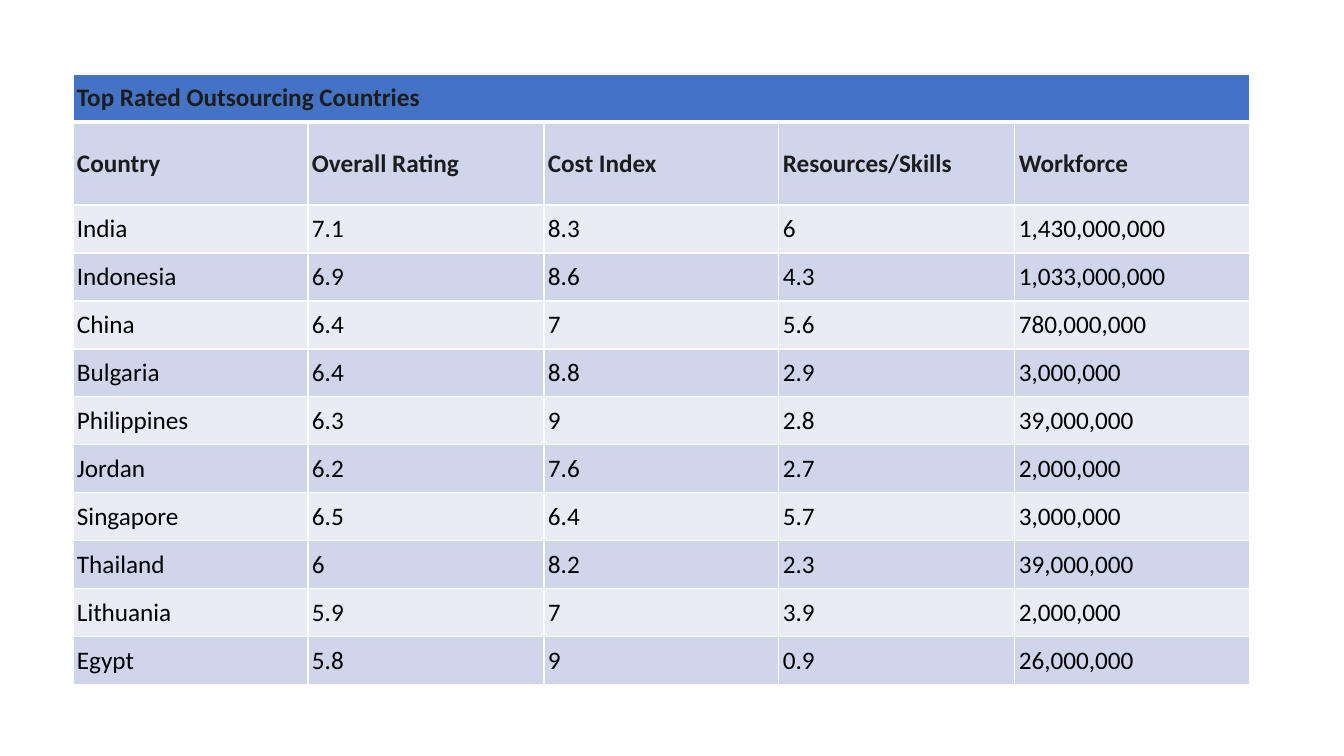
from dataclasses import dataclass
from itertools import pairwise

from lxml import etree
from pptx import Presentation
from pptx import util as u
from pptx.dml.color import RGBColor
from pptx.enum import text
from pptx.oxml import ns

EMU_PER_PX = 914400 / 100.8
SLIDE_WIDTH, SLIDE_HEIGHT = 1344, 756
TABLE_LEFT, TABLE_TOP, TABLE_WIDTH = 73, 74, 1177
ROW_HEIGHT, HEADING_HEIGHT = 48, 83
FONT_NAME, FONT_SIZE = "Calibri", 18
WHITE, BLUE, DARK, BLACK = "FFFFFF", "4472C4", "1C1C1C", "000000"
BANDS = ("CFD5EA", "E9EBF5")

TITLE = "Top Rated Outsourcing Countries"
HEADINGS = ("Country", "Overall Rating", "Cost Index", "Resources/Skills", "Workforce")
COUNTRIES = (
    ("India", "7.1", "8.3", "6", "1,430,000,000"),
    ("Indonesia", "6.9", "8.6", "4.3", "1,033,000,000"),
    ("China", "6.4", "7", "5.6", "780,000,000"),
    ("Bulgaria", "6.4", "8.8", "2.9", "3,000,000"),
    ("Philippines", "6.3", "9", "2.8", "39,000,000"),
    ("Jordan", "6.2", "7.6", "2.7", "2,000,000"),
    ("Singapore", "6.5", "6.4", "5.7", "3,000,000"),
    ("Thailand", "6", "8.2", "2.3", "39,000,000"),
    ("Lithuania", "5.9", "7", "3.9", "2,000,000"),
    ("Egypt", "5.8", "9", "0.9", "26,000,000"),
)


@dataclass(frozen=True)
class TableRow:
    values: tuple[str, ...]
    fill: str
    height: int = ROW_HEIGHT
    color: str = BLACK
    bold: bool = False
    bottom_border: int = 1


def px(length: int) -> u.Emu:
    return u.Emu(round(length * EMU_PER_PX))


def rgb(color: str) -> RGBColor:
    return RGBColor.from_string(color)


def add_borders(cell, bottom_width: int) -> None:
    properties = cell._tc.get_or_add_tcPr()
    for side, width in (("L", 1), ("R", 1), ("T", 1), ("B", bottom_width)):
        line = etree.SubElement(properties, ns.qn(f"a:ln{side}"), w=str(u.Pt(width)))
        fill = etree.SubElement(line, ns.qn("a:solidFill"))
        etree.SubElement(fill, ns.qn("a:srgbClr"), val=WHITE)


def fill_cell(cell, value: str, row: TableRow) -> None:
    add_borders(cell, row.bottom_border)
    cell.fill.solid()
    cell.fill.fore_color.rgb = rgb(row.fill)
    cell.vertical_anchor = text.MSO_ANCHOR.MIDDLE
    cell.margin_left, cell.margin_right = px(4), px(10)
    cell.margin_top = cell.margin_bottom = px(5)
    paragraph = cell.text_frame.paragraphs[0]
    paragraph.alignment = text.PP_ALIGN.LEFT
    if not value:
        return
    run = paragraph.add_run()
    run.text = value
    run.font.name = FONT_NAME
    run.font.size = u.Pt(FONT_SIZE)
    run.font.bold = row.bold
    run.font.color.rgb = rgb(row.color)


def add_country_table(slide, rows: list[TableRow]) -> None:
    column_count = len(HEADINGS)
    height = sum(row.height for row in rows)
    table = slide.shapes.add_table(
        len(rows), column_count, px(TABLE_LEFT), px(TABLE_TOP), px(TABLE_WIDTH), px(height)
    ).table
    table.first_row = table.horz_banding = False
    edges = [round(TABLE_WIDTH * index / column_count) for index in range(column_count + 1)]
    for column, (left, right) in zip(table.columns, pairwise(edges)):
        column.width = px(right - left)
    for table_row, row in zip(table.rows, rows):
        table_row.height = px(row.height)
        for cell, value in zip(table_row.cells, row.values):
            fill_cell(cell, value, row)
    table.cell(0, 0).merge(table.cell(0, column_count - 1))


def main() -> None:
    presentation = Presentation()
    presentation.slide_width = px(SLIDE_WIDTH)
    presentation.slide_height = px(SLIDE_HEIGHT)
    slide = presentation.slides.add_slide(presentation.slide_layouts[6])
    title_values = (TITLE,) + ("",) * (len(HEADINGS) - 1)
    rows = [
        TableRow(title_values, BLUE, color=DARK, bold=True, bottom_border=3),
        TableRow(HEADINGS, BANDS[0], HEADING_HEIGHT, DARK, True),
    ]
    rows += [TableRow(values, BANDS[index % 2]) for index, values in enumerate(COUNTRIES, 1)]
    add_country_table(slide, rows)
    presentation.save("out.pptx")


if __name__ == "__main__":
    main()
